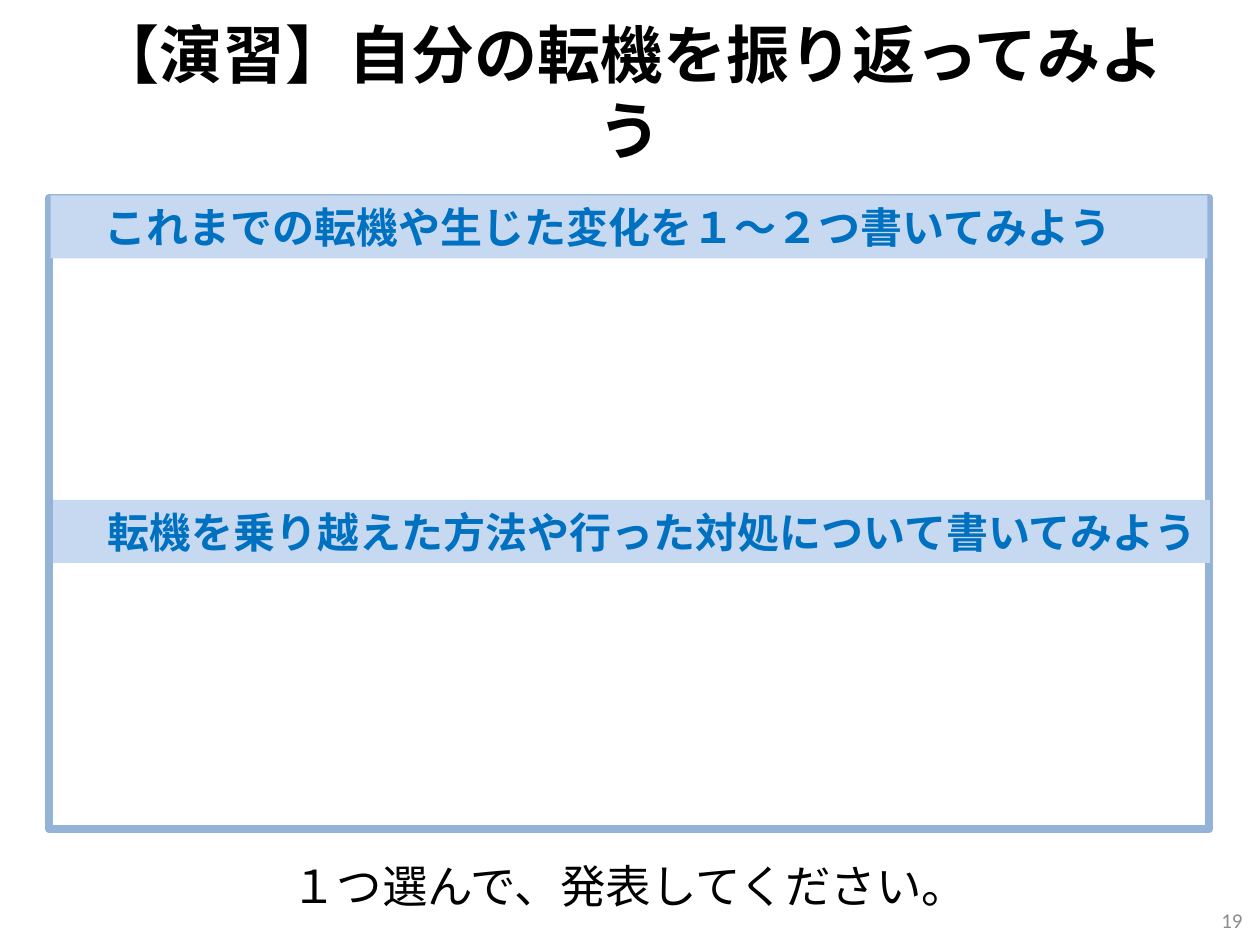
"""Build the exercise slide on looking back at personal turning points."""
import pptx
import pptx.dml.color
import pptx.enum.shapes
import pptx.enum.text
import pptx.util

Cm = pptx.util.Cm
Pt = pptx.util.Pt
Align = pptx.enum.text.PP_ALIGN
Anchor = pptx.enum.text.MSO_ANCHOR
RECTANGLE = pptx.enum.shapes.MSO_SHAPE.RECTANGLE

BLACK = pptx.dml.color.RGBColor(0x00, 0x00, 0x00)
GREY = pptx.dml.color.RGBColor(0x8C, 0x8C, 0x8C)
FRAME_BLUE = pptx.dml.color.RGBColor(0x95, 0xB3, 0xD7)
BAND_BLUE = pptx.dml.color.RGBColor(0xC6, 0xD9, 0xF1)
TEXT_BLUE = pptx.dml.color.RGBColor(0x00, 0x70, 0xC0)


def write_text(box, text, color, alignment, anchor, font_format):
    frame = box.text_frame
    frame.word_wrap = True
    frame.vertical_anchor = anchor
    para = frame.paragraphs[0]
    para.alignment = alignment
    span = para.add_run()
    span.text = text
    span.font.color.rgb = color
    for name, value in {"name": "Calibri", **font_format}.items():
        setattr(span.font, name, value)
    return para


deck = pptx.Presentation()
deck.slide_width = Cm(25.4)
deck.slide_height = Cm(19.05)
page = deck.slides.add_slide(deck.slide_layouts[5])

title = page.shapes.title
title_place = {"left": Cm(1.27), "top": Cm(0.25), "width": Cm(22.86), "height": Cm(3.18)}
for name, value in title_place.items():
    setattr(title, name, value)
write_text(title, "【演習】自分の転機を振り返ってみよう", BLACK, Align.CENTER, Anchor.MIDDLE,
           {"size": Pt(36), "bold": True})

request = page.shapes.add_textbox(Cm(3.84), Cm(17.17), Cm(17.7), Cm(1.73))
request_para = write_text(request, "１つ選んで、発表してください。", BLACK, Align.CENTER,
                          Anchor.TOP, {"size": Pt(26)})
request_para.space_before = Pt(5.2)

number = page.shapes.add_textbox(Cm(19.38), Cm(18.03), Cm(5.92), Cm(1.02))
write_text(number, "19", GREY, Align.RIGHT, Anchor.MIDDLE, {"size": Pt(12)})

answer_frame = page.shapes.add_shape(RECTANGLE, Cm(0.99), Cm(3.99), Cm(23.39), Cm(12.73))
answer_frame.shadow.inherit = False
answer_frame.fill.background()
answer_frame.line.color.rgb = FRAME_BLUE
answer_frame.line.width = Pt(4.5)

questions = [
    (Cm(1.02), Cm(3.94), "　これまでの転機や生じた変化を１～２つ書いてみよう　"),
    (Cm(1.07), Cm(10.08), "　転機を乗り越えた方法や行った対処について書いてみよう"),
]
for left, top, question in questions:
    band = page.shapes.add_shape(RECTANGLE, left, top, Cm(23.32), Cm(1.27))
    band.shadow.inherit = False
    band.fill.solid()
    band.fill.fore_color.rgb = BAND_BLUE
    band.line.fill.background()
    write_text(band, question, TEXT_BLUE, Align.LEFT, Anchor.TOP,
               {"size": Pt(24), "bold": True})
    band.text_frame.auto_size = pptx.enum.text.MSO_AUTO_SIZE.SHAPE_TO_FIT_TEXT

deck.save("out.pptx")
